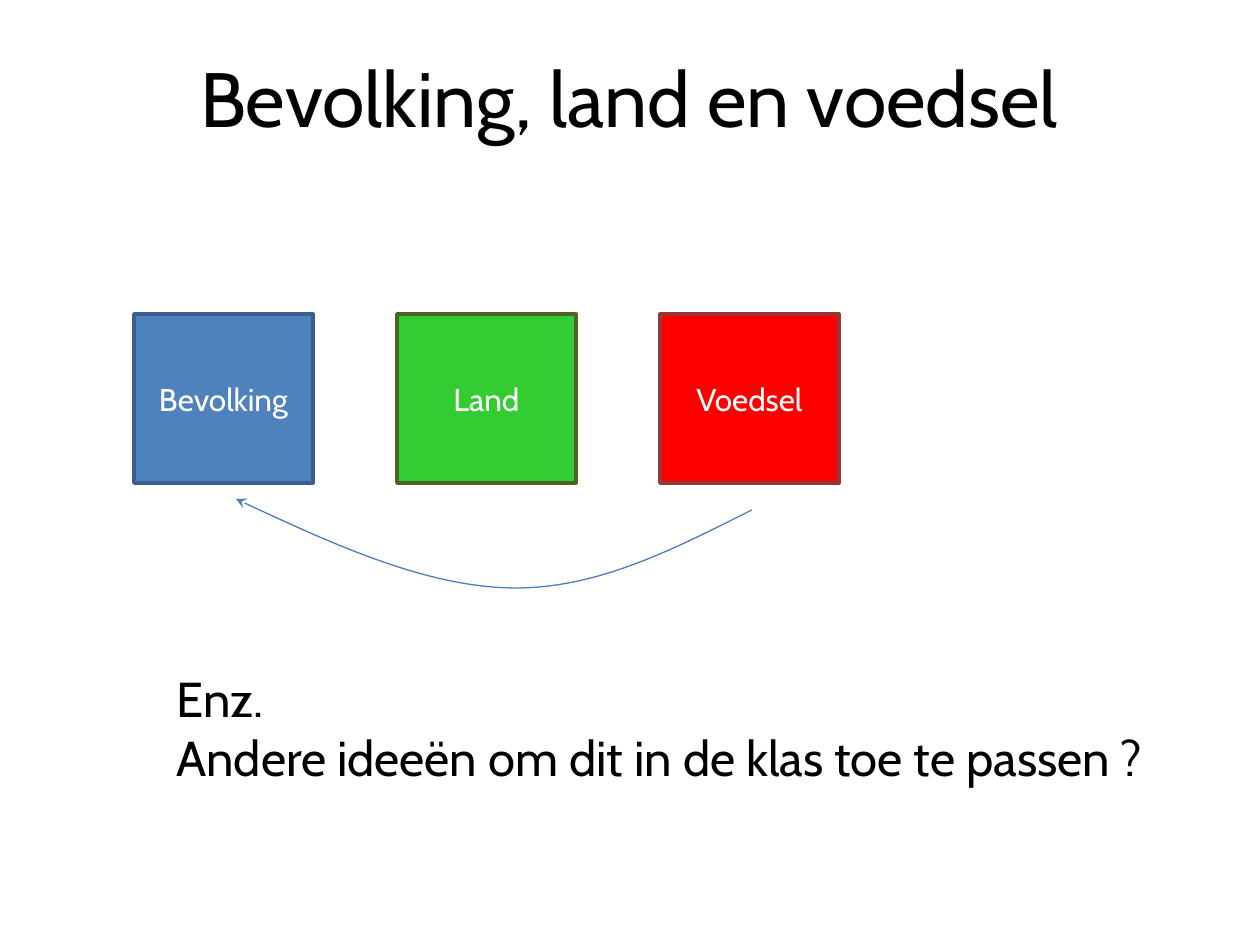
"""Build the slide on population, land and food."""
from dataclasses import dataclass
from typing import NamedTuple

from lxml.etree import SubElement
from pptx import Presentation
from pptx.dml.color import RGBColor
from pptx.enum.text import MSO_ANCHOR, PP_ALIGN
from pptx.enum.shapes import MSO_SHAPE
from pptx.oxml.ns import qn
from pptx.shapes.base import BaseShape
from pptx.slide import Slide
from pptx.text.text import TextFrame
from pptx.util import Emu, Pt


@dataclass(frozen=True)
class Theme:
    font: str = "Cabin"
    ink: str = "000000"
    pale: str = "FFFFFF"
    curve: str = "4B7EBC"
    title: int = 44
    note: int = 28
    label: int = 18
    edge: float = 2
    thin: float = 0.75


class Area(NamedTuple):
    left: int
    top: int
    width: int
    height: int


class Box(NamedTuple):
    label: str
    fill: str
    line: str


THEME = Theme()
SCALE = 914400 / 126
STEP = 263
FIRST = Area(134, 314, 179, 169)
BOXES = [
    Box("Bevolking", "4F81BD", "3A5F8C"),
    Box("Land", "33CC33", "4F6228"),
    Box("Voedsel", "FF0000", "953735"),
]
CURVE = [(752, 510), (674, 549), (596, 590), (510, 588),
         (425, 586), (330, 543), (236, 499)]


def px(count: int) -> Emu:
    return Emu(round(count * SCALE))


def place(area: Area) -> list[Emu]:
    return [px(part) for part in area]


def write(frame: TextFrame, text: str, size: int, color: str, align: PP_ALIGN) -> None:
    frame.text = text
    for para in frame.paragraphs:
        para.alignment = align
        para.font.name = THEME.font
        para.font.size = Pt(size)
        para.font.color.rgb = RGBColor.from_string(color)


def stroke(shape: BaseShape, color: str, width: float) -> None:
    shape.shadow.inherit = False
    shape.line.color.rgb = RGBColor.from_string(color)
    shape.line.width = Pt(width)


def head(slide: Slide, text: str, area: Area) -> None:
    title = slide.shapes.title
    title.left, title.top, title.width, title.height = place(area)
    title.text_frame.vertical_anchor = MSO_ANCHOR.MIDDLE
    write(title.text_frame, text, THEME.title, THEME.ink, PP_ALIGN.CENTER)


def block(slide: Slide, box: Box, area: Area) -> None:
    shape = slide.shapes.add_shape(MSO_SHAPE.RECTANGLE, *place(area))
    shape.fill.solid()
    shape.fill.fore_color.rgb = RGBColor.from_string(box.fill)
    stroke(shape, box.line, THEME.edge)
    shape.text_frame.vertical_anchor = MSO_ANCHOR.MIDDLE
    write(shape.text_frame, box.label, THEME.label, THEME.pale, PP_ALIGN.CENTER)


def arrow(slide: Slide, points: list[tuple[int, int]]) -> None:
    pen = slide.shapes.build_freeform(*points[0], scale=SCALE)
    pen.add_line_segments(points[1:], close=False)
    shape = pen.convert_to_shape()
    shape.fill.background()
    stroke(shape, THEME.curve, THEME.thin)
    SubElement(shape.line._get_or_add_ln(), qn("a:tailEnd"), type="stealth")
    trace = next(shape._element.iter(qn("a:path")))
    legs = trace.findall(qn("a:lnTo"))
    for start in range(0, len(legs), 3):
        bend = SubElement(trace, qn("a:cubicBezTo"))
        for leg in legs[start:start + 3]:
            bend.append(leg[0])
            trace.remove(leg)


def note(slide: Slide, text: str, area: Area) -> None:
    frame = slide.shapes.add_textbox(*place(area)).text_frame
    frame.word_wrap = False
    write(frame, text, THEME.note, THEME.ink, PP_ALIGN.LEFT)


def main() -> None:
    deck = Presentation()
    deck.slide_width, deck.slide_height = px(1260), px(945)
    slide = deck.slides.add_slide(deck.slide_layouts[5])
    head(slide, "Bevolking, land en voedsel", Area(94, 18, 1071, 158))
    for rank, box in enumerate(BOXES):
        block(slide, box, FIRST._replace(left=FIRST.left + rank * STEP))
    arrow(slide, CURVE)
    note(slide, "Enz.\nAndere ideeën om dit in de klas toe te passen ?",
         Area(164, 662, 1066, 131))
    deck.save("out.pptx")


if __name__ == "__main__":
    main()
